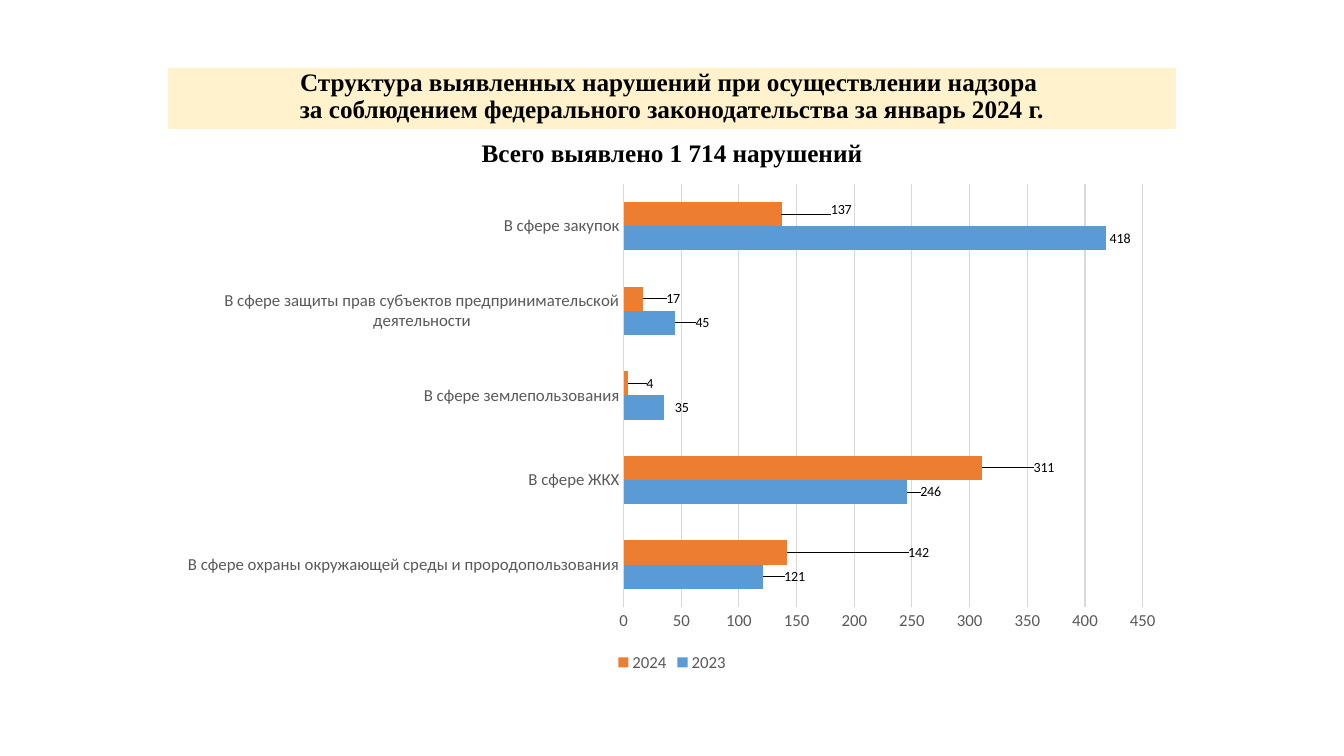
from lxml.etree import SubElement
from pptx import Presentation
from pptx.chart.data import CategoryChartData
from pptx.dml.color import RGBColor
from pptx.enum.chart import XL_CHART_TYPE, XL_LABEL_POSITION, XL_LEGEND_POSITION, XL_TICK_MARK
from pptx.enum.text import MSO_ANCHOR, MSO_AUTO_SIZE, PP_ALIGN
from pptx.oxml import parse_xml
from pptx.oxml.ns import nsdecls, qn
from pptx.util import Inches, Pt

COLORS = {"banner": "FFF2CC", "ink": "000000", "axis": "595959", "label": "404040",
          "grid": "D9D9D9", "2023": "5B9BD5", "2024": "ED7D31"}
WIDTH, HEIGHT = 13.33, 7.5
LEFT, SPAN = WIDTH / 8, WIDTH * 3 / 4
CATEGORIES = ["В сфере охраны окружающей среды и прородопользования", "В сфере ЖКХ",
              "В сфере землепользования",
              "В сфере защиты прав субъектов предпринимательской деятельности",
              "В сфере закупок"]
VIOLATIONS = {"2023": [121, 246, 35, 45, 418], "2024": [142, 311, 4, 17, 137]}
LABEL_SHIFTS = {"2023": [(1.7, 0), (0.9, 0), (0.7, 0), (1.6, 0), (0, 0)],
                "2024": [(11.6, 0), (4.7, 0), (1.4, 0), (1.9, 0), (4.5, -0.8)]}
PLOT_AREA = {"x": 45.2, "y": 2.1, "w": 51.5, "h": 84.1}


def color(name):
    """Return the palette colour with the given name."""
    return RGBColor.from_string(COLORS[name])


def style_font(font, size, name, face="Calibri", bold=False):
    """Set size, colour, typeface and weight of a font."""
    font.size, font.name, font.bold = Pt(size), face, bold
    font.color.rgb = color(name)


def write_heading(shape, text, box, anchor, spacing, before=0):
    """Move a placeholder into its box and write a bold centred heading."""
    shape.left, shape.top, shape.width, shape.height = map(Inches, box)
    frame = shape.text_frame
    frame.text = text
    frame.word_wrap, frame.auto_size = True, MSO_AUTO_SIZE.NONE
    frame.vertical_anchor = anchor
    para = frame.paragraphs[0]
    para.alignment, para.line_spacing = PP_ALIGN.CENTER, spacing
    para.space_before = Pt(before)
    for span in para.runs:
        style_font(span.font, 18, "ink", "Times New Roman", True)


def manual_layout(values, inner=False):
    """Build a chart layout element from percentages of the chart size."""
    layout = parse_xml(f"<c:layout {nsdecls('c')}><c:manualLayout/></c:layout>")
    manual = layout[0]
    if inner:
        SubElement(manual, qn("c:layoutTarget")).set("val", "inner")
        for key in "xy":
            SubElement(manual, qn(f"c:{key}Mode")).set("val", "edge")
    for key, percent in values.items():
        SubElement(manual, qn(f"c:{key}")).set("val", f"{percent / 100:.3f}")
    return layout


def style_axis(axis):
    """Hide the line and ticks of an axis and format its labels."""
    axis.major_tick_mark = axis.minor_tick_mark = XL_TICK_MARK.NONE
    axis.format.line.fill.background()
    style_font(axis.tick_labels.font, 12, "axis")


def style_series(series):
    """Colour a series and shift its value labels."""
    series.format.fill.solid()
    series.format.fill.fore_color.rgb = color(series.name)
    series.invert_if_negative = False
    labels = series.data_labels
    labels.show_value = True
    labels.position = XL_LABEL_POSITION.OUTSIDE_END
    style_font(labels.font, 12, "label")
    for index, (across, down) in enumerate(LABEL_SHIFTS[series.name]):
        label = series.points[index].data_label
        label.position = XL_LABEL_POSITION.OUTSIDE_END
        element = labels._element.findall(qn("c:dLbl"))[index]
        element.insert(1, manual_layout({"x": across, "y": down}))


def add_violations_chart(page, box):
    """Place the clustered bar chart of violations in its box."""
    data = CategoryChartData()
    data.categories = CATEGORIES
    for year, values in VIOLATIONS.items():
        data.add_series(year, values)
    chart = page.shapes.add_chart(XL_CHART_TYPE.BAR_CLUSTERED, *map(Inches, box), data).chart
    style_font(chart.font, 10, "ink")
    chart.has_title = False
    chart.has_legend = True
    chart.legend.position = XL_LEGEND_POSITION.BOTTOM
    chart.legend.include_in_layout = False
    style_font(chart.legend.font, 12, "axis")
    plot = chart.plots[0]
    plot.gap_width, plot.overlap, plot.vary_by_categories = 150, 0, False
    for series in plot.series:
        style_series(series)
    style_axis(chart.category_axis)
    values = chart.value_axis
    style_axis(values)
    values.minimum_scale, values.maximum_scale, values.major_unit = 0, 450, 50
    values.has_major_gridlines = True
    values.major_gridlines.format.line.color.rgb = color("grid")
    values.major_gridlines.format.line.width = Pt(0.75)
    area = plot._element.getparent()
    for layout in area.findall(qn("c:layout")):
        area.remove(layout)
    area.insert(0, manual_layout(PLOT_AREA, inner=True))


def build_page(deck):
    """Add the slide with its banner, total and chart."""
    page = deck.slides.add_slide(deck.slide_layouts[0])
    banner, total = page.placeholders
    banner.fill.solid()
    banner.fill.fore_color.rgb = color("banner")
    write_heading(banner, "Структура выявленных нарушений при осуществлении надзора \v"
                  "за соблюдением федерального законодательства за январь 2024 г.",
                  (LEFT, 0.67, SPAN, 0.61), MSO_ANCHOR.BOTTOM, 0.9)
    write_heading(total, "Всего выявлено 1 714 нарушений",
                  (LEFT, 1.37, SPAN, 0.36), MSO_ANCHOR.TOP, 0.8)
    add_violations_chart(page, (LEFT, 1.72, SPAN, 4.99))


def main():
    """Create and save the deck."""
    deck = Presentation()
    deck.slide_width, deck.slide_height = Inches(WIDTH), Inches(HEIGHT)
    build_page(deck)
    deck.save("out.pptx")


if __name__ == "__main__":
    main()
